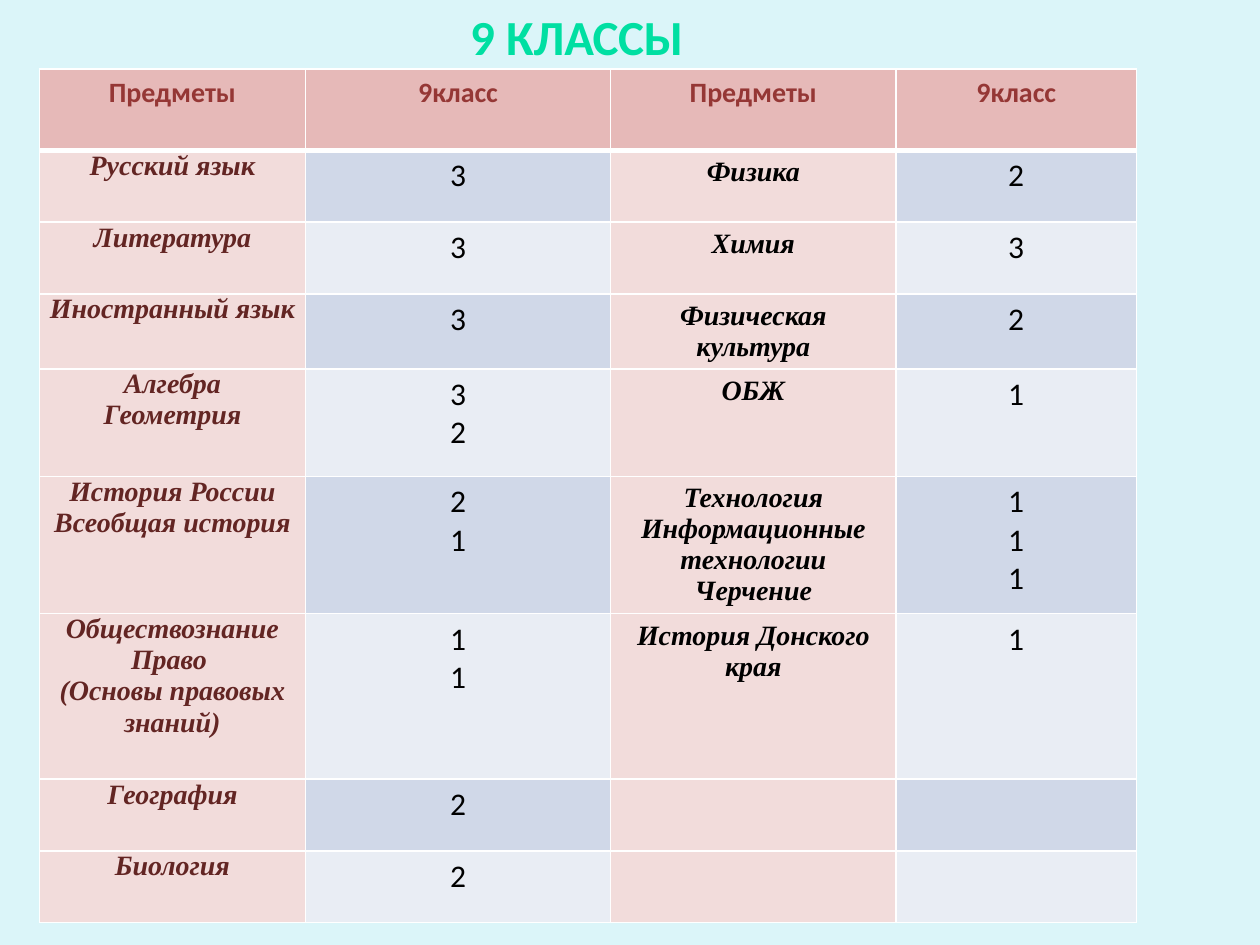
from lxml.etree import SubElement as Sub
from pptx import Presentation
from pptx.dml.color import RGBColor as Rgb
from pptx.enum.text import PP_ALIGN as Align
from pptx.oxml.ns import qn
from pptx.util import Pt

HUES = {
    "back": "DBF5F9", "title": "00DFA2", "line": "FFFFFF",
    "head": "E6B9B8", "name": "F2DCDB", "odd": "D0D8E8", "even": "E9EDF4",
    "red": "953735", "wine": "632523", "black": "000000",
}
FONTS = {
    "title": {"name": "Calibri", "size": Pt(28), "bold": True},
    "head": {"name": "Calibri", "size": Pt(16), "bold": True, "italic": False},
    "name": {"name": "Times New Roman", "size": Pt(16), "bold": True, "italic": True},
    "hours": {"name": "Calibri", "size": Pt(18), "bold": False, "italic": False},
}
SLIM = {"margin_left": Pt(5), "margin_right": Pt(5),
        "margin_top": Pt(0), "margin_bottom": Pt(0)}
COLS = [152, 174.5, 163, 137.5]
ROWS = [46.5, 41, 41, 42.5, 61.5, 78.5, 94.5, 41, 41]
DATA = [
    ["Предметы", "9класс", "Предметы", "9класс"],
    ["Русский язык", "3", "Физика", "2"],
    ["Литература", "3", "Химия", "3"],
    ["Иностранный язык", "3", "Физическая культура", "2"],
    ["Алгебра\nГеометрия", "3\n2", "ОБЖ", "1"],
    ["История России\nВсеобщая история", "2\n1",
     "Технология\nИнформационные технологии\nЧерчение", "1\n1\n1"],
    ["Обществознание Право \n(Основы правовых знаний)", "1\n1",
     "История Донского края", "1"],
    ["География", "2", "", ""],
    ["Биология", "2", "", ""],
]


def color(key):
    return Rgb.from_string(HUES[key])


def apply(item, attrs):
    for key, value in attrs.items():
        setattr(item, key, value)


def write(frame, text, font, hue):
    """Fill a text frame with centred paragraphs, one per line of text."""
    frame.text = text
    for para in frame.paragraphs:
        para.alignment = Align.CENTER
        for run in para.runs:
            apply(run.font, FONTS[font])
            run.font.color.rgb = color(hue)


def edge(cell, widths):
    """Draw the cell borders; widths maps a side to points."""
    props = cell._tc.get_or_add_tcPr()
    for side, width in widths.items():
        line = Sub(props, qn(f"a:ln{side}"), w=str(Pt(width)))
        fill = Sub(line, qn("a:solidFill"))
        Sub(fill, qn("a:srgbClr"), val=HUES["line"])


def style(row, col):
    """Return the font, text hue and fill of a cell."""
    if row == 0:
        return "head", "red", "head"
    if col % 2 == 0:
        return "name", "black" if col else "wine", "name"
    return "hours", "black", "odd" if row % 2 else "even"


def add_title(slide):
    box = slide.shapes.add_textbox(Pt(191.5), Pt(0), Pt(276), Pt(41))
    box.text_frame.word_wrap = True
    write(box.text_frame, "9 КЛАССЫ", "title", "title")


def add_grid(slide):
    frame = slide.shapes.add_table(
        len(ROWS), len(COLS), Pt(22.5), Pt(39.5), Pt(sum(COLS)), Pt(sum(ROWS)))
    table = frame.table
    for col, width in zip(table.columns, COLS):
        col.width = Pt(width)
    for row, height in zip(table.rows, ROWS):
        row.height = Pt(height)
    for r, line in enumerate(DATA):
        for c, text in enumerate(line):
            cell = table.cell(r, c)
            font, hue, fill = style(r, c)
            edge(cell, {"L": 1, "R": 1, "T": 3 if r == 1 else 1,
                        "B": 3 if r == 0 else 1})
            cell.fill.solid()
            cell.fill.fore_color.rgb = color(fill)
            if r and c == 0:
                apply(cell, SLIM)
            write(cell.text_frame, text, font, hue)


def main():
    deck = Presentation()
    apply(deck, {"slide_width": Pt(720), "slide_height": Pt(540)})
    slide = deck.slides.add_slide(deck.slide_layouts[6])
    slide.background.fill.solid()
    slide.background.fill.fore_color.rgb = color("back")
    add_grid(slide)
    add_title(slide)
    deck.save("out.pptx")


if __name__ == "__main__":
    main()
